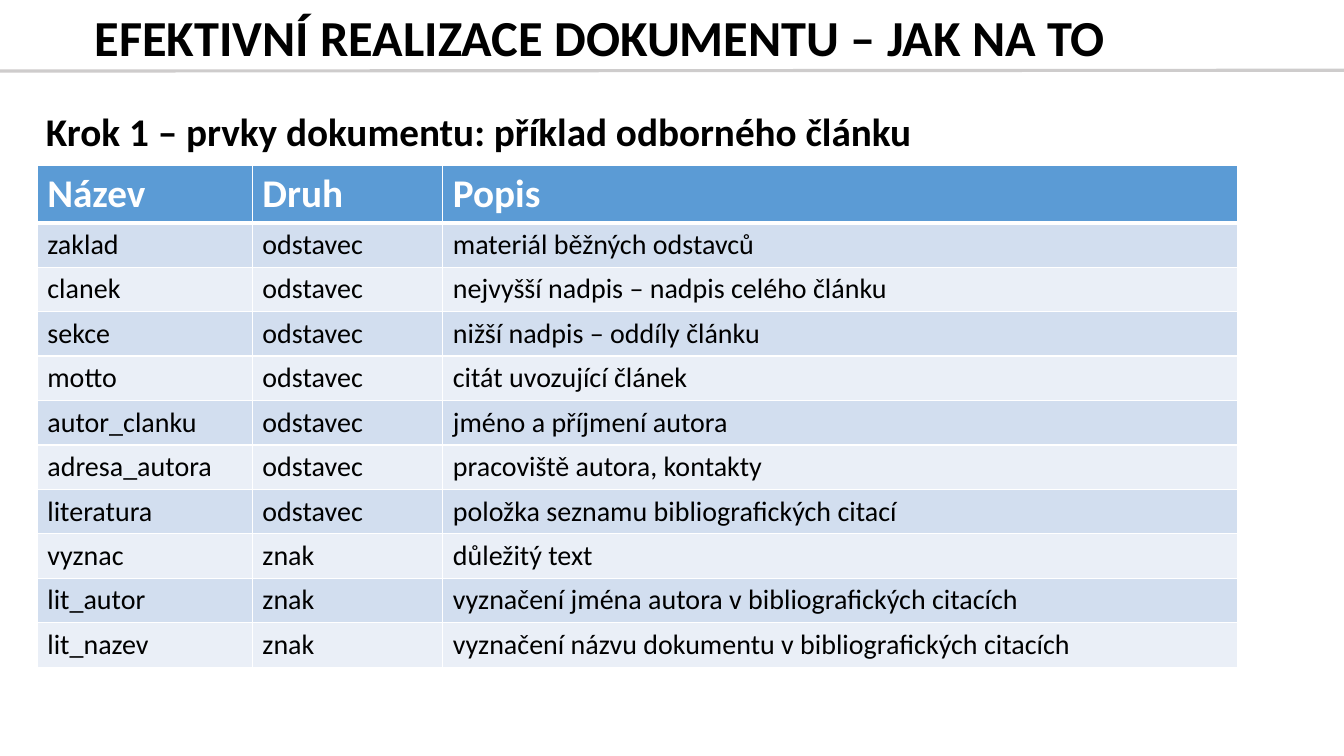
import pptx
import pptx.dml.color
import pptx.enum.shapes
import pptx.enum.text
import pptx.oxml
import pptx.oxml.ns
import pptx.util

Cm = pptx.util.Cm
Pt = pptx.util.Pt
MIDDLE = pptx.enum.text.MSO_ANCHOR.MIDDLE
TOP = pptx.enum.text.MSO_ANCHOR.TOP

SLIDE_WIDTH, SLIDE_HEIGHT = 33.87, 19.05
BLACK, WHITE, RULE_GRAY = "000000", "FFFFFF", "CECCCC"
HEADER_FILL, BAND_FILLS = "5B9BD5", ("D2DEEF", "EAEFF7")

HEADINGS = ("Název", "Druh", "Popis")
STYLES = (
    ("zaklad", "odstavec", "materiál běžných odstavců"),
    ("clanek", "odstavec", "nejvyšší nadpis – nadpis celého článku"),
    ("sekce", "odstavec", "nižší nadpis – oddíly článku"),
    ("motto", "odstavec", "citát uvozující článek"),
    ("autor_clanku", "odstavec", "jméno a příjmení autora"),
    ("adresa_autora", "odstavec", "pracoviště autora, kontakty"),
    ("literatura", "odstavec", "položka seznamu bibliografických citací"),
    ("vyznac", "znak", "důležitý text"),
    ("lit_autor", "znak", "vyznačení jména autora v bibliografických citacích"),
    ("lit_nazev", "znak", "vyznačení názvu dokumentu v bibliografických citacích"),
)
COLUMN_WIDTHS = (5.42, 4.8, 20.03)
HEADER_HEIGHT, ROW_HEIGHT = 1.25, 1.12


def color(value):
    return pptx.dml.color.RGBColor.from_string(value)


def write_text(frame, text, size=20, font_color=BLACK, bold=False,
               line_spacing=None, space_before=None):
    paragraph = frame.paragraphs[0]
    if line_spacing:
        paragraph.line_spacing = line_spacing
    if space_before:
        paragraph.space_before = Pt(space_before)
    run = paragraph.add_run()
    run.text = text
    run.font.name = "Calibri"
    run.font.size = Pt(size)
    run.font.bold = bold
    run.font.color.rgb = color(font_color)


def add_text(slide, box, text, anchor=TOP, left_margin=0.25, **text_format):
    shape = slide.shapes.add_textbox(*map(Cm, box))
    frame = shape.text_frame
    frame.word_wrap = True
    frame.vertical_anchor = anchor
    frame.margin_left = Cm(left_margin)
    write_text(frame, text, **text_format)


def add_title(slide, box, text):
    left, top, width, height = box
    # Rule under the title, across the whole slide
    rule_top = top + height + 0.09
    rule = slide.shapes.add_connector(
        pptx.enum.shapes.MSO_CONNECTOR.STRAIGHT,
        Cm(left), Cm(rule_top), Cm(left + SLIDE_WIDTH), Cm(rule_top - 0.02))
    rule.line.color.rgb = color(RULE_GRAY)
    rule.line.width = Pt(2.25)
    properties = rule._element.spPr
    properties.append(pptx.oxml.parse_xml(
        f'<a:effectLst {pptx.oxml.ns.nsdecls("a")}/>'))

    add_text(slide, box, text, anchor=MIDDLE, left_margin=2.39,
             size=36, bold=True, line_spacing=0.9)


def set_borders(cell, bottom_width):
    properties = cell._tc.get_or_add_tcPr()
    widths = {"lnL": 1, "lnR": 1, "lnT": 1, "lnB": bottom_width}
    # Borders come before the fill in the cell properties
    for position, (side, width) in enumerate(widths.items()):
        properties.insert(position, pptx.oxml.parse_xml(
            f'<a:{side} {pptx.oxml.ns.nsdecls("a")} w="{Pt(width)}">'
            f'<a:solidFill><a:srgbClr val="{WHITE}"/></a:solidFill></a:{side}>'))


def add_styles_table(slide, left, top):
    rows = (HEADINGS,) + STYLES
    height = HEADER_HEIGHT + ROW_HEIGHT * len(STYLES)
    table = slide.shapes.add_table(
        len(rows), len(HEADINGS), Cm(left), Cm(top),
        Cm(sum(COLUMN_WIDTHS)), Cm(height)).table
    for column, width in zip(table.columns, COLUMN_WIDTHS):
        column.width = Cm(width)

    for row_index, texts in enumerate(rows):
        is_header = row_index == 0
        table.rows[row_index].height = Cm(HEADER_HEIGHT if is_header else ROW_HEIGHT)
        fill = HEADER_FILL if is_header else BAND_FILLS[(row_index - 1) % 2]
        for column_index, text in enumerate(texts):
            cell = table.cell(row_index, column_index)
            cell.fill.solid()
            cell.fill.fore_color.rgb = color(fill)
            # The thick line under the header is shared with the first row
            set_borders(cell, bottom_width=3 if is_header else 1)
            if row_index == 1:
                cell._tc.tcPr.find(pptx.oxml.ns.qn("a:lnT")).set("w", str(Pt(3)))
            write_text(cell.text_frame, text, size=28 if is_header else 20,
                       font_color=WHITE if is_header else BLACK, bold=is_header)


def main():
    presentation = pptx.Presentation()
    presentation.slide_width = Cm(SLIDE_WIDTH)
    presentation.slide_height = Cm(SLIDE_HEIGHT)
    slide = presentation.slides.add_slide(presentation.slide_layouts[6])

    add_title(slide, (0, 0.33, 33.32, 1.37),
              "EFEKTIVNÍ REALIZACE DOKUMENTU – JAK NA TO")
    # Subtitle above the table
    add_text(slide, (0.91, 2.72, 30.23, 1.4),
             "Krok 1 – prvky dokumentu: příklad odborného článku",
             size=28, bold=True, line_spacing=0.9, space_before=10)
    add_styles_table(slide, 0.94, 4.17)

    presentation.save("out.pptx")


if __name__ == "__main__":
    main()
